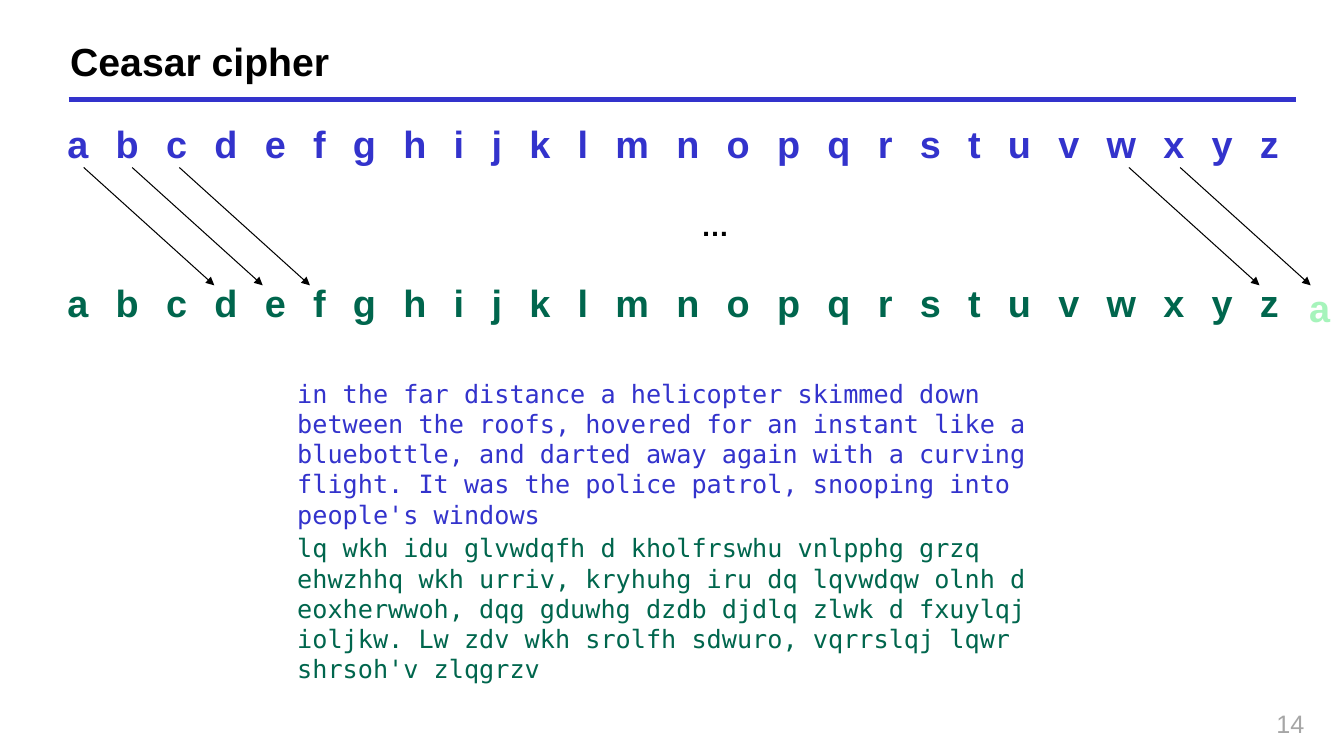
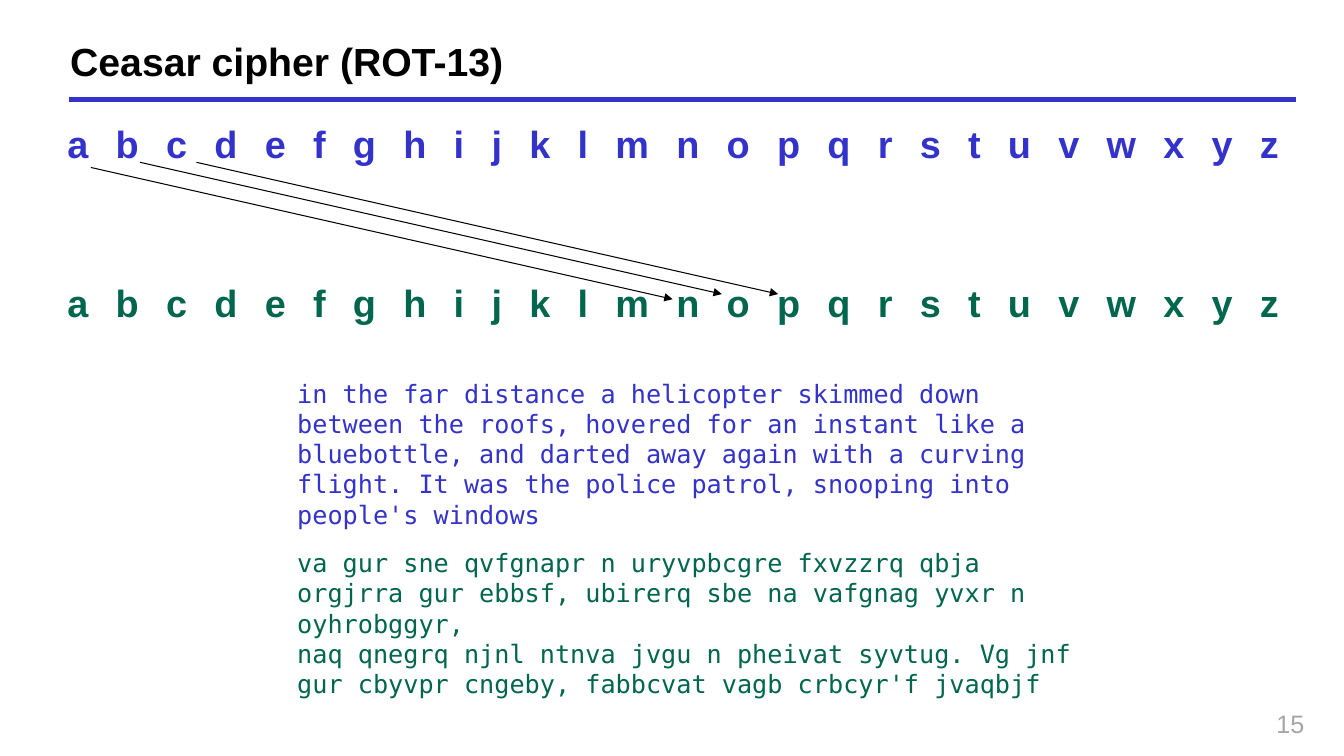
from dataclasses import dataclass

from lxml.etree import SubElement
from pptx import Presentation
from pptx.dml.color import RGBColor
from pptx.enum.shapes import MSO_CONNECTOR as Connector
from pptx.enum.text import MSO_ANCHOR as Anchor, PP_ALIGN as Align
from pptx.oxml.ns import qn
from pptx.slide import Slide
from pptx.util import Cm, Pt

BLUE = RGBColor(0x33, 0x33, 0xCC)
GREEN = RGBColor(0x00, 0x66, 0x4D)
PALE_GREEN = RGBColor(0xA6, 0xF4, 0xBB)
GRAY = RGBColor(0xA6, 0xA6, 0xA6)
BLACK = RGBColor(0, 0, 0)

SANS = "Arial"
MONO = "DejaVu Sans Mono"
ALPHABET = " ".join("abcdefghijklmnopqrstuvwxyz")
PLAIN_TEXT = (
    "in the far distance a helicopter skimmed down between the roofs, "
    "hovered for an instant like a bluebottle, and darted away again with "
    "a curving flight. It was the police patrol, snooping into people's windows"
)
SHIFT_3_TEXT = (
    "lq wkh idu glvwdqfh d kholfrswhu vnlpphg grzq ehwzhhq wkh urriv, "
    "kryhuhg iru dq lqvwdqw olnh d eoxherwwoh, dqg gduwhg dzdb djdlq zlwk "
    "d fxuylqj ioljkw. Lw zdv wkh srolfh sdwuro, vqrrslqj lqwr shrsoh'v zlqgrzv"
)
ROT_13_TEXT = (
    "va gur sne qvfgnapr n uryvpbcgre fxvzzrq qbja orgjrra gur ebbsf, "
    "ubirerq sbe na vafgnag yvxr n oyhrobggyr,\n"
    "naq qnegrq njnl ntnva jvgu n pheivat syvtug. Vg jnf\n"
    "gur cbyvpr cngeby, fabbcvat vagb crbcyr'f jvaqbjf"
)


@dataclass(frozen=True)
class Box:
    left: float
    top: float
    width: float
    height: float


@dataclass(frozen=True)
class Style:
    size: float
    color: RGBColor
    font: str = SANS
    bold: bool = False
    spacing: float = 0
    align: Align = Align.LEFT
    anchor: Anchor = Anchor.TOP


@dataclass(frozen=True)
class CipherSlide:
    number: int
    title: str
    cipher_text: str
    cipher_top: float
    arrow_starts: tuple[tuple[float, float], ...]
    arrow_run: float
    arrow_drop: float


TITLE = Style(28, BLACK, bold=True, anchor=Anchor.MIDDLE)
PAGE_NUMBER = Style(18, GRAY, align=Align.RIGHT)
ELLIPSIS = Style(20, BLACK, bold=True)

CAESAR = CipherSlide(
    14, "Ceasar cipher", SHIFT_3_TEXT, 13.3,
    tuple((left, 4.22) for left in (2.11, 3.33, 4.52, 28.45, 29.74)),
    3.29, 2.97,
)
ROT_13 = CipherSlide(
    15, "Ceasar cipher (ROT-13)", ROT_13_TEXT, 13.67,
    ((2.29, 4.22), (3.53, 4.09), (4.95, 4.09)),
    14.66, 3.32,
)


def letter_style(color: RGBColor) -> Style:
    return Style(27, color, bold=True, spacing=6)


def add_text(slide: Slide, box: Box, text: str, style: Style) -> None:
    shape = slide.shapes.add_textbox(
        Cm(box.left), Cm(box.top), Cm(box.width), Cm(box.height)
    )
    frame = shape.text_frame
    frame.word_wrap = True
    frame.vertical_anchor = style.anchor
    frame.text = text
    for paragraph in frame.paragraphs:
        paragraph.alignment = style.align
        font = paragraph.font
        font.name = style.font
        font.size = Pt(style.size)
        font.bold = style.bold
        font.color.rgb = style.color
        if style.spacing:
            font._rPr.set("spc", str(round(style.spacing * 100)))


def add_line(
    slide: Slide, start: tuple[float, float], end: tuple[float, float],
    color: RGBColor, width: float, arrow: bool = False,
) -> None:
    connector = slide.shapes.add_connector(
        Connector.STRAIGHT, Cm(start[0]), Cm(start[1]), Cm(end[0]), Cm(end[1])
    )
    connector.line.color.rgb = color
    connector.line.width = Pt(width)
    if arrow:
        SubElement(connector.line._get_or_add_ln(), qn("a:tailEnd"), type="triangle")
    SubElement(connector._element.spPr, qn("a:effectLst"))


def add_cipher_slide(presentation: Presentation, content: CipherSlide) -> Slide:
    slide = presentation.slides.add_slide(presentation.slide_layouts[6])
    add_line(slide, (1.73, 2.51), (32.66, 2.51), BLUE, 3)
    add_text(slide, Box(26.06, 17.73, 7.06, 0.91), str(content.number), PAGE_NUMBER)
    add_text(slide, Box(1.52, 0.91, 30.94, 1.27), content.title, TITLE)
    for top, color in ((2.92, BLUE), (6.93, GREEN)):
        add_text(slide, Box(1.45, top, 32, 1.4), ALPHABET, letter_style(color))
    for text, top, color in (
        (PLAIN_TEXT, 9.4, BLUE),
        (content.cipher_text, content.cipher_top, GREEN),
    ):
        add_text(slide, Box(7.24, top, 20.07 if color == GREEN else 19.5, 4.08),
                 text, Style(18, color, MONO))
    for left, top in content.arrow_starts:
        end = (left + content.arrow_run, top + content.arrow_drop)
        add_line(slide, (left, top), end, BLACK, 0.75, arrow=True)
    return slide


def main() -> None:
    presentation = Presentation()
    presentation.slide_width = Cm(33.87)
    presentation.slide_height = Cm(19.05)
    caesar_slide = add_cipher_slide(presentation, CAESAR)
    add_text(caesar_slide, Box(17.42, 5.13, 2.29, 1.12), "…", ELLIPSIS)
    add_text(caesar_slide, Box(32.74, 7.04, 1.3, 1.45), "a", letter_style(PALE_GREEN))
    add_cipher_slide(presentation, ROT_13)
    presentation.save("out.pptx")


if __name__ == "__main__":
    main()
